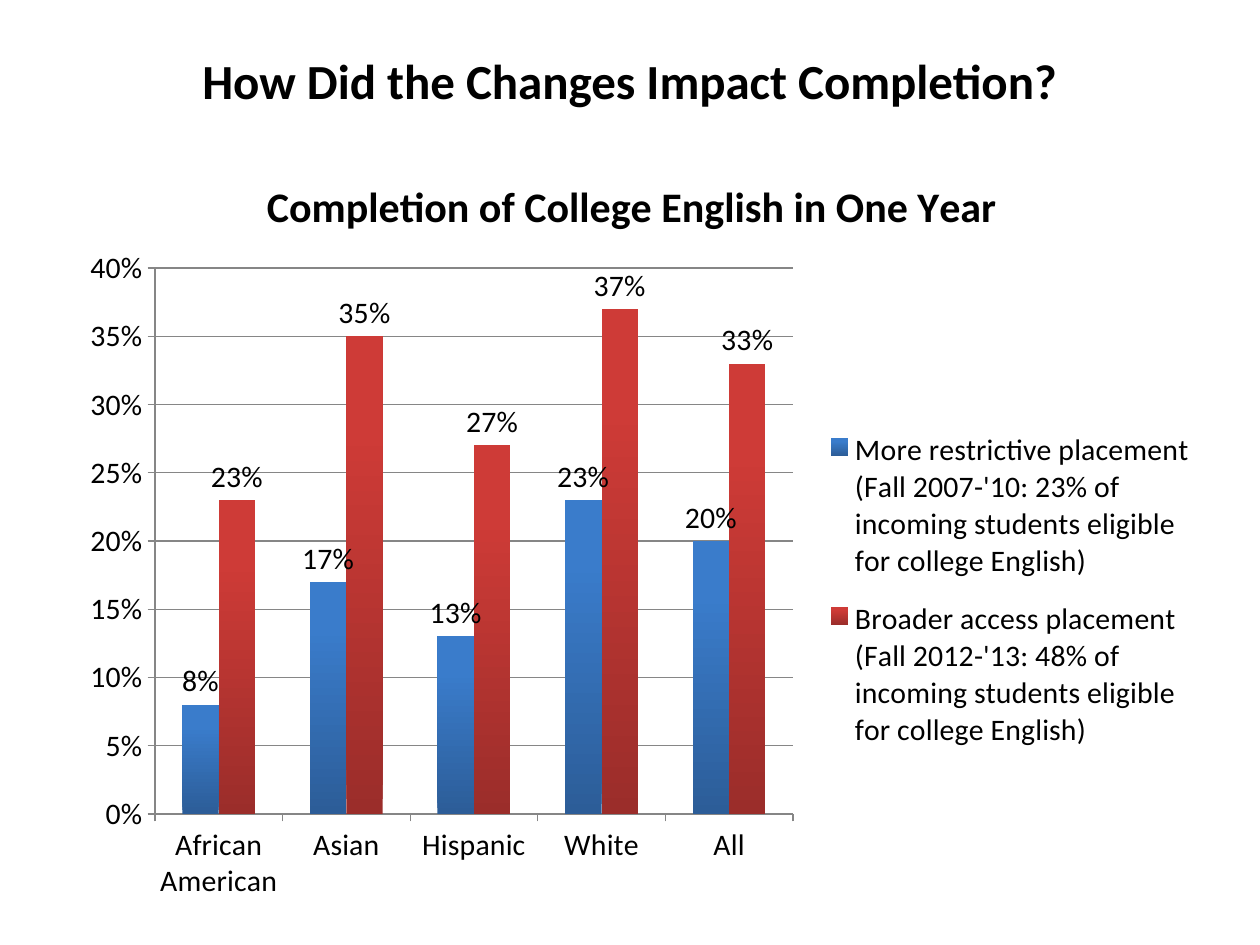
from dataclasses import dataclass

from lxml import etree
from pptx import Presentation
from pptx import util as u
from pptx.chart.data import CategoryChartData
from pptx.dml.color import RGBColor
from pptx.enum import chart as charts, text
from pptx.oxml.ns import qn

PX_PER_INCH = 126
FONT = "Calibri"
COLORS = {
    "text": "000000",
    "grid": "868686",
    "blue_light": "3A7CCB",
    "blue_dark": "2C5D98",
    "red_light": "CE3B37",
    "red_dark": "9B2D2A",
}


@dataclass(frozen=True)
class Box:
    left: int
    top: int
    width: int
    height: int


@dataclass(frozen=True)
class Placement:
    name: str
    rates: tuple[float, ...]
    light: str
    dark: str


SLIDE = Box(0, 0, 1260, 945)
TITLE = Box(18, 44, 1223, 72)
CHART = Box(68, 149, 1137, 766)
PLOT = Box(155, 268, 638, 546)
LEGEND = Box(820, 410, 380, 360)

GROUPS = ("African American", "Asian", "Hispanic", "White", "All")
PLACEMENTS = (
    Placement(
        "More restrictive placement (Fall 2007-'10: 23% of incoming students "
        "eligible for college English)",
        (0.08, 0.17, 0.13, 0.23, 0.20), "blue_light", "blue_dark",
    ),
    Placement(
        "Broader access placement (Fall 2012-'13: 48% of incoming students "
        "eligible for college English)",
        (0.23, 0.35, 0.27, 0.37, 0.33), "red_light", "red_dark",
    ),
)


def px(length: int) -> int:
    return round(length * u.Inches(1) / PX_PER_INCH)


def color(name: str) -> RGBColor:
    return RGBColor.from_string(COLORS[name])


def style_font(font, size: int, bold: bool = False) -> None:
    font.name, font.size, font.bold = FONT, u.Pt(size), bold
    font.color.rgb = color("text")


def style_line(line) -> None:
    line.color.rgb = color("grid")
    line.width = u.Pt(0.75)


def layout_for(box: Box, inner: bool = False):
    """Manual chart layout, as fractions of the chart's frame."""
    layout = etree.Element(qn("c:layout"))
    manual = etree.SubElement(layout, qn("c:manualLayout"))
    settings = [("layoutTarget", "inner")] if inner else []
    settings += [
        ("xMode", "edge"),
        ("yMode", "edge"),
        ("x", f"{(box.left - CHART.left) / CHART.width:.4f}"),
        ("y", f"{(box.top - CHART.top) / CHART.height:.4f}"),
        ("w", f"{box.width / CHART.width:.4f}"),
        ("h", f"{box.height / CHART.height:.4f}"),
    ]
    for tag, value in settings:
        etree.SubElement(manual, qn(f"c:{tag}")).set("val", value)
    return layout


def set_layout(parent, layout, after: str | None = None) -> None:
    for old in parent.findall(qn("c:layout")):
        parent.remove(old)
    index = parent.index(parent.find(qn(after))) + 1 if after else 0
    parent.insert(index, layout)


def style_series(series, placement: Placement) -> None:
    series.invert_if_negative = False
    fill = series.format.fill
    fill.gradient()
    fill.gradient_angle = 90
    for stop, name in zip(fill.gradient_stops, (placement.dark, placement.light)):
        stop.color.rgb = color(name)
    fill.gradient_stops[1].position = 0.8
    labels = series.data_labels
    labels.show_value = True
    labels.number_format, labels.number_format_is_linked = "0%", False
    labels.position = charts.XL_LABEL_POSITION.OUTSIDE_END
    style_font(labels.font, 17)


def add_title(slide, title: str) -> None:
    shape = slide.shapes.title
    shape.left, shape.top = px(TITLE.left), px(TITLE.top)
    shape.width, shape.height = px(TITLE.width), px(TITLE.height)
    frame = shape.text_frame
    frame.text = title
    frame.word_wrap = True
    frame.vertical_anchor = text.MSO_ANCHOR.TOP
    frame.auto_size = text.MSO_AUTO_SIZE.SHAPE_TO_FIT_TEXT
    para = frame.paragraphs[0]
    para.alignment = text.PP_ALIGN.CENTER
    style_font(para.font, 28, bold=True)


def add_completion_chart(slide, title: str) -> None:
    data = CategoryChartData(number_format="0%")
    data.categories = GROUPS
    for placement in PLACEMENTS:
        data.add_series(placement.name, placement.rates)
    chart = slide.shapes.add_chart(
        charts.XL_CHART_TYPE.COLUMN_CLUSTERED,
        px(CHART.left), px(CHART.top), px(CHART.width), px(CHART.height), data,
    ).chart
    style_font(chart.font, 17)

    # Chart title
    chart.has_title = True
    heading = chart.chart_title.text_frame
    heading.text = title
    style_font(heading.paragraphs[0].font, 24, bold=True)
    chart.chart_title.include_in_layout = False

    # Columns
    plot = chart.plots[0]
    plot.gap_width, plot.overlap = 150, 0
    plot.vary_by_categories = False
    for series, placement in zip(plot.series, PLACEMENTS):
        style_series(series, placement)

    # Axes
    values = chart.value_axis
    values.minimum_scale, values.maximum_scale, values.major_unit = 0, 0.4, 0.05
    values.tick_labels.number_format = "0%"
    values.tick_labels.number_format_is_linked = False
    style_line(values.major_gridlines.format.line)
    for axis in (chart.category_axis, values):
        axis.major_tick_mark = charts.XL_TICK_MARK.OUTSIDE
        axis.minor_tick_mark = charts.XL_TICK_MARK.NONE
        style_line(axis.format.line)
        style_font(axis.tick_labels.font, 17)

    # Legend and plot positions
    chart.has_legend = True
    legend = chart.legend
    legend.position = charts.XL_LEGEND_POSITION.RIGHT
    legend.include_in_layout = False
    style_font(legend.font, 17)
    root = chart.element
    set_layout(root.find(".//" + qn("c:plotArea")), layout_for(PLOT, inner=True))
    set_layout(root.find(".//" + qn("c:legend")), layout_for(LEGEND), "c:legendPos")


def main() -> None:
    deck = Presentation()
    deck.slide_width, deck.slide_height = px(SLIDE.width), px(SLIDE.height)
    page = deck.slides.add_slide(deck.slide_layouts.get_by_name("Title Only"))
    add_completion_chart(page, "Completion of College English in One Year ")
    add_title(page, "How Did the Changes Impact Completion?")
    deck.save("out.pptx")


if __name__ == "__main__":
    main()
